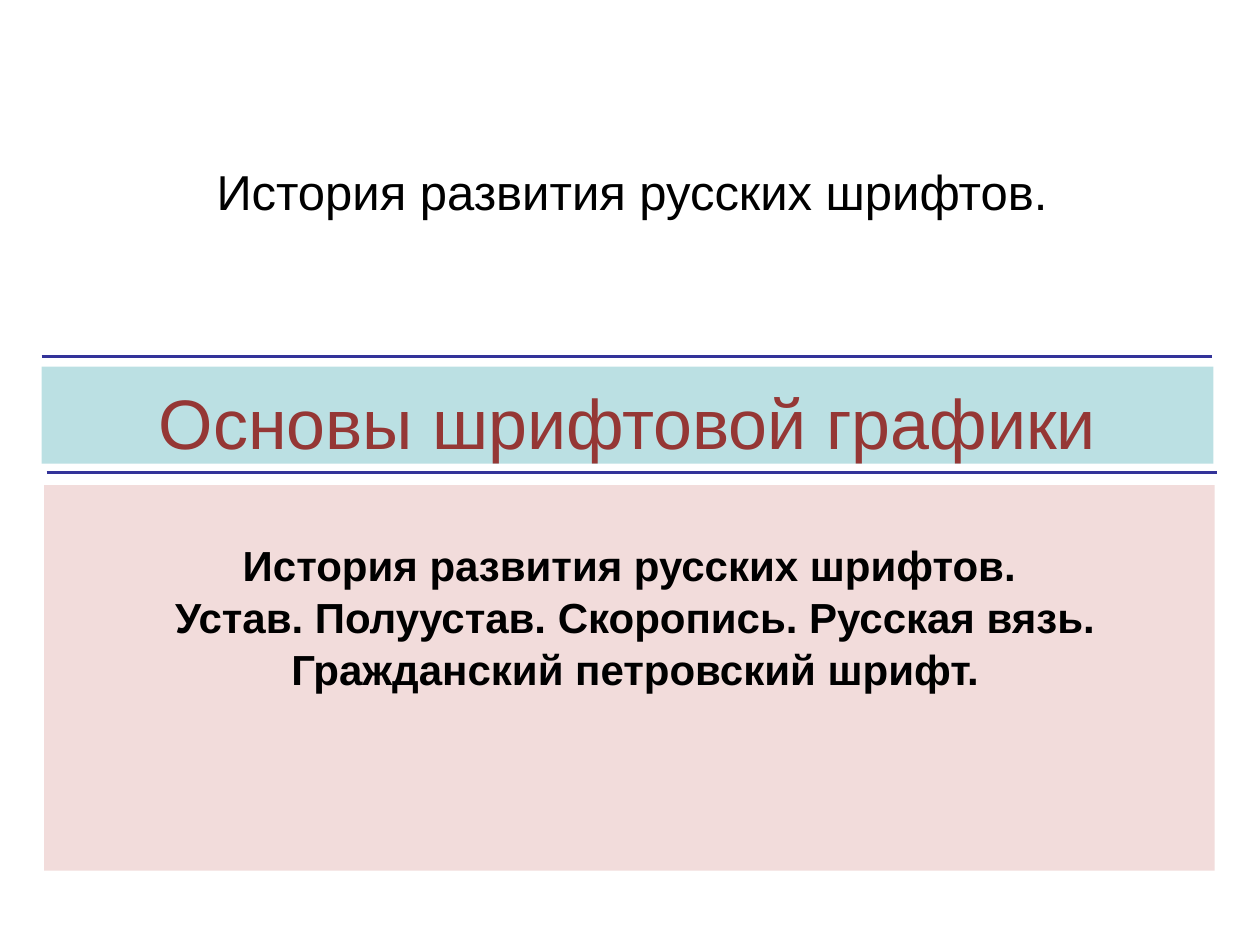
from lxml import etree
from pptx import Presentation
from pptx.dml.color import RGBColor as Rgb
from pptx.enum import shapes, text
from pptx.oxml import ns
from pptx.util import Inches, Pt

THEME = {
    "font": "Arial",
    "rule": Rgb.from_string("333399"),
    "band": Rgb.from_string("BBE0E3"),
    "panel": Rgb.from_string("F2DCDB"),
    "title": Rgb.from_string("953735"),
    "ink": Rgb.from_string("000000"),
    "big": Pt(40), "mid": Pt(28), "small": Pt(24), "line": Pt(2),
}
WIDE = 9.29

deck = Presentation()
deck.slide_width, deck.slide_height = Inches(10), Inches(7.5)
slide = deck.slides.add_slide(deck.slide_layouts[6])


def write(shape, lines, top, size, color, bold=False):
    """Fill a shape with centred lines, starting at the given top inset."""
    frame = shape.text_frame
    form = {
        "word_wrap": True, "vertical_anchor": text.MSO_ANCHOR.TOP,
        "margin_left": 0, "margin_right": 0, "margin_bottom": 0,
        "margin_top": Inches(top),
    }
    for key, value in form.items():
        setattr(frame, key, value)
    look = {"name": THEME["font"], "size": THEME[size], "bold": bold}
    for i, line in enumerate(lines):
        para = frame.paragraphs[0] if i == 0 else frame.add_paragraph()
        para.alignment = text.PP_ALIGN.CENTER
        if i:
            para.space_before = Pt(1)
        run = para.add_run()
        run.text = line
        for key, value in look.items():
            setattr(run.font, key, value)
        run.font.color.rgb = THEME[color]


# Rules above and below the title band
for left, top in ((0.33, 2.83), (0.37, 3.75)):
    rule = slide.shapes.add_connector(
        shapes.MSO_CONNECTOR.STRAIGHT,
        Inches(left), Inches(top), Inches(left + WIDE), Inches(top))
    rule.line.color.rgb = THEME["rule"]
    rule.line.width = THEME["line"]
    etree.SubElement(rule._element.spPr, ns.qn("a:effectLst"))

# Title band and topic panel
blocks = (
    ((0.33, 2.91, 9.3, 0.77), "band",
     ["Основы шрифтовой графики"], 0.1, "big", "title", False),
    ((0.35, 3.85, WIDE, 3.06), "panel",
     ["История развития русских шрифтов.",
      " Устав. Полуустав. Скоропись. Русская вязь.",
      " Гражданский петровский шрифт."], 0.43, "small", "ink", True),
)
for area, fill, lines, top, size, color, bold in blocks:
    block = slide.shapes.add_shape(
        shapes.MSO_SHAPE.RECTANGLE, *map(Inches, area))
    block.shadow.inherit = False
    block.fill.solid()
    block.fill.fore_color.rgb = THEME[fill]
    block.line.fill.background()
    write(block, lines, top, size, color, bold)

# Heading
head = slide.shapes.add_textbox(*map(Inches, (0.37, 0.56, WIDE, 2.36)))
write(head, ["История развития русских шрифтов."], 0.97, "mid", "ink")

deck.save("out.pptx")
